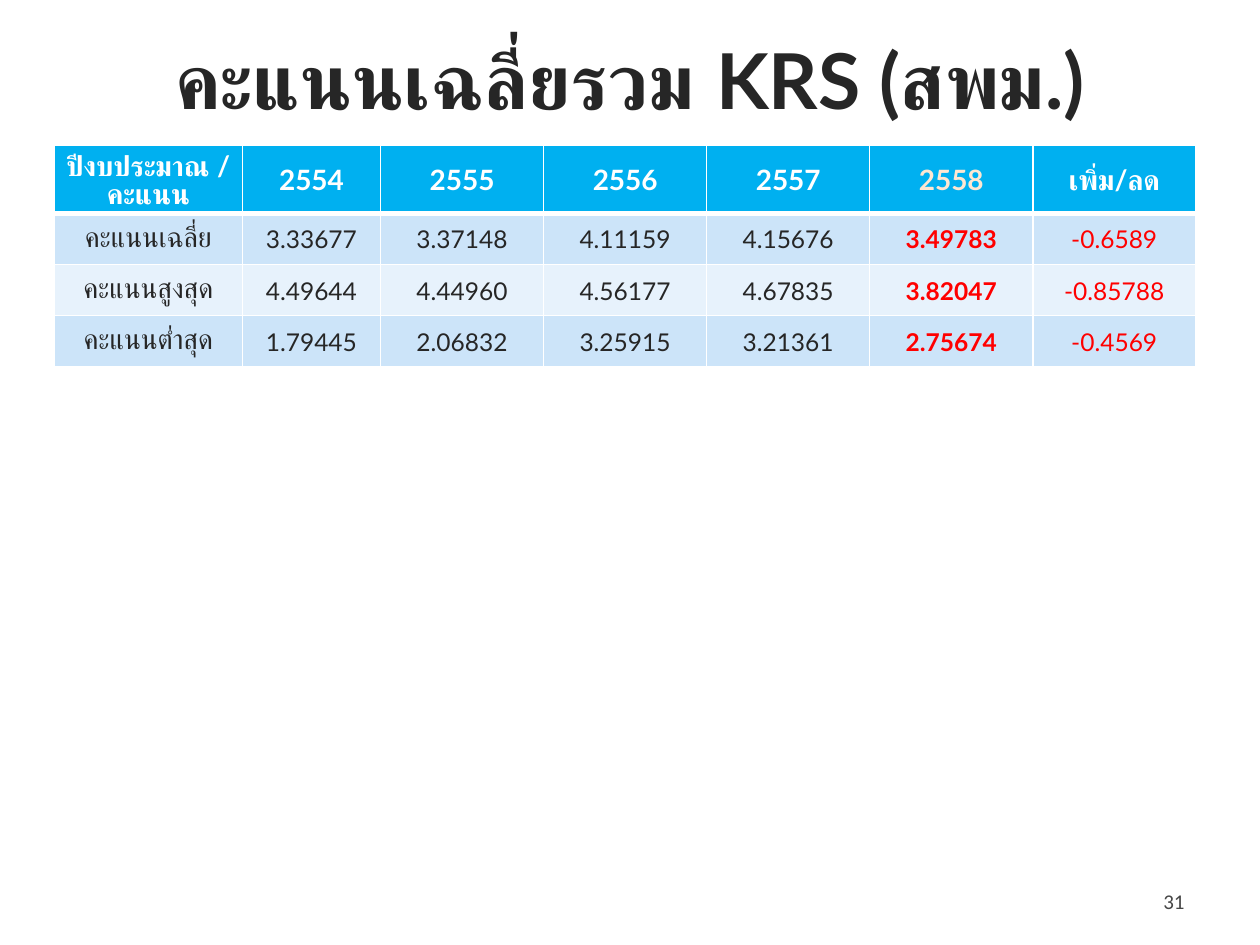
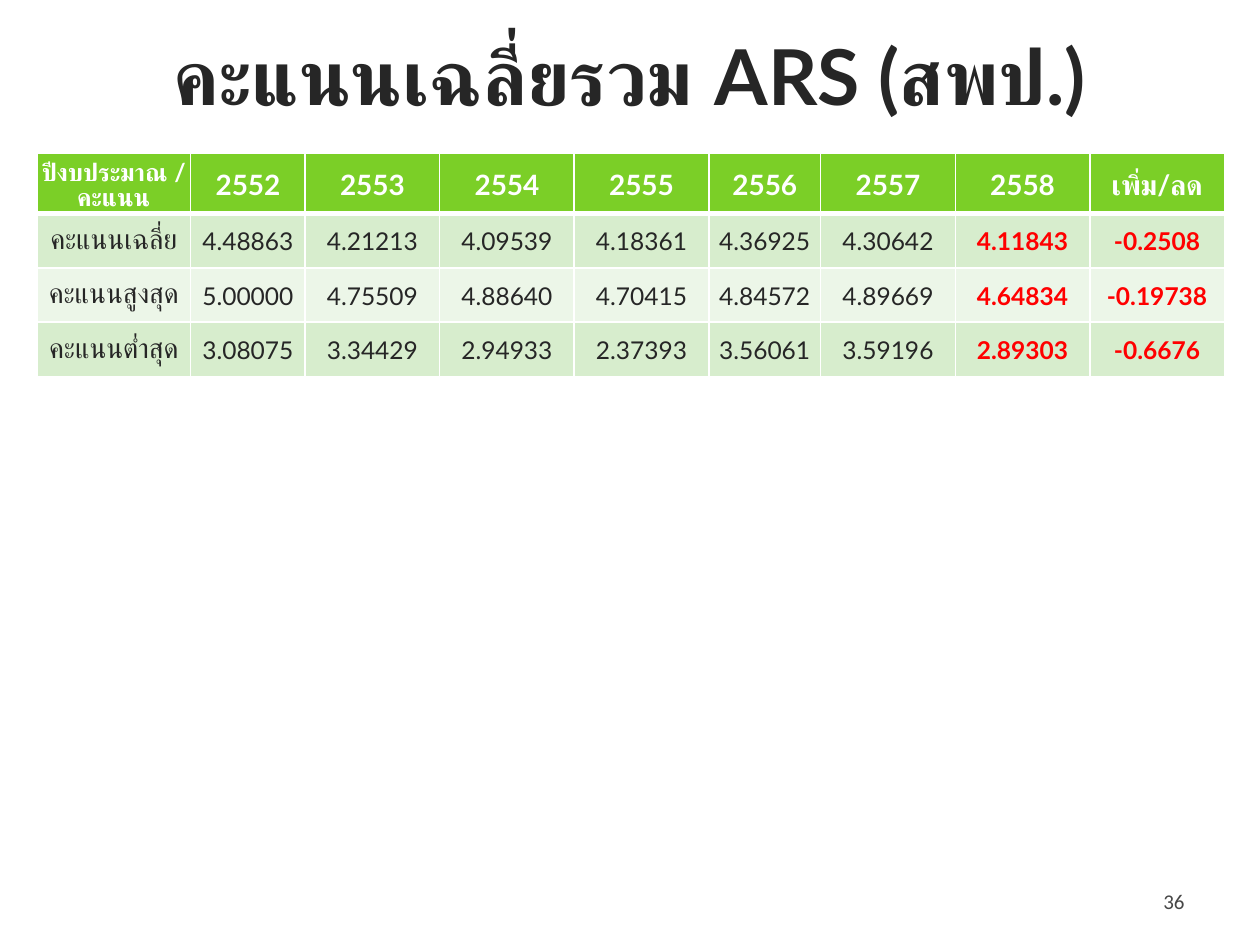
"""Build two slides of yearly average scores, each with a title, a table and a page number."""
import pptx
import pptx.util
import pptx.dml.color
import pptx.enum.text
import pptx.oxml

Pt = pptx.util.Pt
ALIGN = pptx.enum.text.PP_ALIGN
MID = pptx.enum.text.MSO_ANCHOR.MIDDLE
INK, WHITE, RED, GREY, CREAM = "262626", "FFFFFF", "FF0000", "474747", "FDE7D2"
CORNER, CHANGE = "ปีงบประมาณ / คะแนน", "เพิ่ม/ลด"
LABELS = ["คะแนนเฉลี่ย", "คะแนนสูงสุด", "คะแนนต่ำสุด"]

SLIDES = [
    {
        "title": "คะแนนเฉลี่ยรวม KRS (สพม.)", "page": "31", "top": 0,
        "at": (31, 82.8), "cols": [107.5, 79] + [93.2] * 5, "rows": [29.2] * 4,
        "fills": ("00B0F0", "CCE4F9", "E7F2FC"),
        "corner": 16, "latest": CREAM, "bold": False,
        "years": range(2554, 2559),
        "scores": [
            ["3.33677", "3.37148", "4.11159", "4.15676", "3.49783", "-0.6589"],
            ["4.49644", "4.44960", "4.56177", "4.67835", "3.82047", "-0.85788"],
            ["1.79445", "2.06832", "3.25915", "3.21361", "2.75674", "-0.4569"],
        ],
    },
    {
        "title": "คะแนนเฉลี่ยรวม ARS (สพป.)", "page": "36", "top": -2.2,
        "at": (21, 87.8), "cols": [88, 65.4] + [76.9] * 3 + [64] + [76.9] * 3,
        "rows": [29.5] + [31] * 3,
        "fills": ("7BCF27", "D7EDCD", "ECF6E8"),
        "corner": 14, "latest": WHITE, "bold": True,
        "years": range(2552, 2559),
        "scores": [
            ["4.48863", "4.21213", "4.09539", "4.18361", "4.36925", "4.30642", "4.11843", "-0.2508"],
            ["5.00000", "4.75509", "4.88640", "4.70415", "4.84572", "4.89669", "4.64834", "-0.19738"],
            ["3.08075", "3.34429", "2.94933", "2.37393", "3.56061", "3.59196", "2.89303", "-0.6676"],
        ],
    },
]


def rgb(code):
    return pptx.dml.color.RGBColor.from_string(code)


def write(frame, text, size, tint, bold=False, face="Lato", align=ALIGN.CENTER):
    frame.text = text
    frame.word_wrap = True
    line = frame.paragraphs[0]
    line.alignment = align
    font = line.runs[0].font
    font.name, font.size, font.bold = face, Pt(size), bold
    font.color.rgb = rgb(tint)


def add_text(slide, box, *args, **style):
    frame = slide.shapes.add_textbox(*map(Pt, box)).text_frame
    write(frame, *args, **style)
    frame.vertical_anchor = MID


def edge(cell, row):
    space = "http://schemas.openxmlformats.org/drawingml/2006/main"
    widths = {"L": 1, "R": 1, "T": 3 if row == 1 else 1, "B": 3 if row == 0 else 1}
    for side, width in widths.items():
        cell._tc.get_or_add_tcPr().append(pptx.oxml.parse_xml(
            f'<a:ln{side} xmlns:a="{space}" w="{Pt(width)}"><a:solidFill>'
            f'<a:srgbClr val="{WHITE}"/></a:solidFill></a:ln{side}>'))


def style(data, row, col):
    last = len(data["cols"]) - 1
    if row == 0:
        size = data["corner"] if col == 0 else 16
        return size, data["latest"] if col == last - 1 else WHITE, True
    if col == 0:
        return 16, INK, False
    if col < last - 1:
        return 14, INK, False
    return 14, RED, col == last - 1 or data["bold"]


def add_grid(slide, data):
    cells = [[CORNER, *map(str, data["years"]), CHANGE]]
    cells += [[label, *row] for label, row in zip(LABELS, data["scores"])]
    cols, rows = data["cols"], data["rows"]
    box = (*data["at"], sum(cols), sum(rows))
    table = slide.shapes.add_table(len(rows), len(cols), *map(Pt, box)).table
    for col, width in zip(table.columns, cols):
        col.width = Pt(width)
    for row, height in zip(table.rows, rows):
        row.height = Pt(height)
    head, odd, even = data["fills"]
    for r, (line, fill) in enumerate(zip(cells, (head, odd, even, odd))):
        for c, text in enumerate(line):
            cell = table.cell(r, c)
            write(cell.text_frame, text, *style(data, r, c))
            cell.vertical_anchor = MID
            cell.margin_left = cell.margin_right = cell.margin_top = Pt(0.7)
            cell.margin_bottom = 0
            edge(cell, r)
            cell.fill.solid()
            cell.fill.fore_color.rgb = rgb(fill)


def main():
    deck = pptx.Presentation()
    deck.slide_width, deck.slide_height = Pt(720), Pt(540)
    for data in SLIDES:
        slide = deck.slides.add_slide(deck.slide_layouts[6])
        add_text(slide, (36, data["top"], 648, 90), data["title"], 44, INK, True)
        add_text(slide, (516, 500.5, 168, 28.8), data["page"], 12, GREY,
                 face="Calibri", align=ALIGN.RIGHT)
        add_grid(slide, data)
    deck.save("out.pptx")


if __name__ == "__main__":
    main()
